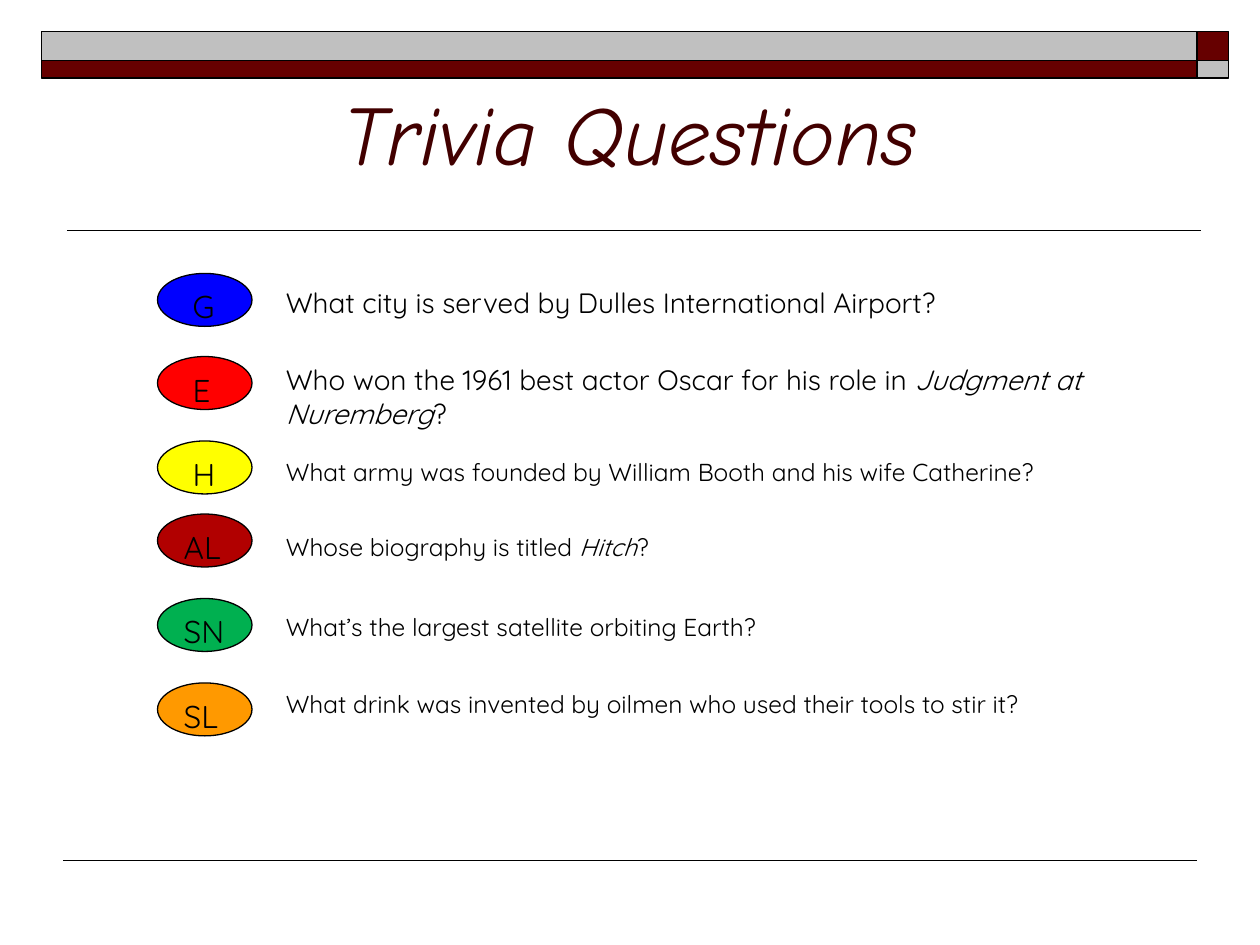
from pptx import Presentation, util as u
from pptx.dml.color import RGBColor
from pptx.enum import shapes, text
from pptx.oxml.ns import qn
from lxml import etree

COLORS = {
    "black": "000000", "maroon": "660000", "silver": "C0C0C0", "title": "420000",
    "blue": "0000FF", "red": "FF0000", "yellow": "FFFF00", "brown": "B10000",
    "green": "00B050", "orange": "FF9900",
}
BODY = {"name": "Quicksand", "color": "black"}
TITLE = {"name": "Comic Neue", "size": u.Pt(48), "italic": True, "bold": False, "color": "title"}

# label, label indent, colour, oval top, question top, width, height, size, runs as (text, italic)
QUESTIONS = [
    ("G", 0.07, "blue", 2.17, 2.22, 6.17, 0.37, 16,
     [("What city is served by Dulles International Airport?", False)]),
    ("E", 0.07, "red", 2.83, 2.83, 6.75, 0.64, 16,
     [("Who won the 1961 best actor Oscar for his role in ", False),
      ("Judgment at Nuremberg", True), ("?", False)]),
    ("H", 0.07, "yellow", 3.5, 3.58, 6.58, 0.34, 14,
     [("What army was founded by William Booth and his wife Catherine?", False)]),
    ("AL", 0, "brown", 4.08, 4.17, 7.08, 0.34, 14,
     [("Whose biography is titled ", False), ("Hitch", True), ("?", False)]),
    ("SN", 0, "green", 4.75, 4.81, 6.5, 0.34, 14,
     [("What’s the largest satellite orbiting Earth?", False)]),
    ("SL", 0, "orange", 5.42, 5.42, 7.17, 0.34, 14,
     [("What drink was invented by oilmen who used their tools to stir it?", False)]),
]


def rgb(name):
    """Return the named colour."""
    return RGBColor.from_string(COLORS[name])


def add_run(p, words, **style):
    """Add a run and apply its font values."""
    r = p.add_run()
    r.text = words
    for key, value in style.items():
        if key == "color":
            r.font.color.rgb = rgb(value)
        else:
            setattr(r.font, key, value)


def add_rule(s, left, top, width, weight):
    """Draw a horizontal black rule."""
    left, top, width = u.Inches(left), u.Inches(top), u.Inches(width)
    rule = s.shapes.add_connector(shapes.MSO_CONNECTOR.STRAIGHT, left, top, left + width, top)
    rule.line.color.rgb = rgb("black")
    rule.line.width = u.Pt(weight)
    etree.SubElement(rule._element.spPr, qn("a:effectLst"))


def add_filled(s, kind, box, color, weight):
    """Draw a filled, black-outlined preset shape."""
    sp = s.shapes.add_shape(kind, *map(u.Inches, box))
    sp.shadow.inherit = False
    sp.fill.solid()
    sp.fill.fore_color.rgb = rgb(color)
    sp.line.color.rgb = rgb("black")
    sp.line.width = u.Pt(weight)
    return sp


def add_banner(s):
    """Draw the two-row banner with its end blocks in swapped colours."""
    for top, height, main_color, end_color in [(0.25, 0.23, "silver", "maroon"),
                                               (0.48, 0.14, "maroon", "silver")]:
        for left, width, color in [(0.33, 9.17, main_color), (9.5, 0.25, end_color)]:
            add_filled(s, shapes.MSO_SHAPE.RECTANGLE, (left, top, width, height), color, 1)


def set_title(s, words):
    """Place and format the title placeholder."""
    sp = s.shapes.title
    for key, value in {"left": 0.5, "top": 0.25, "width": 9, "height": 1.25}.items():
        setattr(sp, key, u.Inches(value))
    tf = sp.text_frame
    tf.vertical_anchor = text.MSO_ANCHOR.BOTTOM
    p = tf.paragraphs[0]
    p.alignment = text.PP_ALIGN.CENTER
    add_run(p, words, **TITLE)


def add_category(s, label, indent, color, top):
    """Draw a category oval with its letters."""
    sp = add_filled(s, shapes.MSO_SHAPE.OVAL, (1.25, top, 0.75, 0.42), color, 0.75)
    tf = sp.text_frame
    for key, value in {"vertical_anchor": text.MSO_ANCHOR.TOP, "word_wrap": True,
                       "margin_left": u.Inches(0.1 + indent), "margin_right": 0}.items():
        setattr(tf, key, value)
    p = tf.paragraphs[0]
    p.alignment = text.PP_ALIGN.LEFT
    add_run(p, label, size=u.Pt(18), **BODY)


def add_question(s, top, width, height, size, runs):
    """Add a question beside its category oval."""
    tf = s.shapes.add_textbox(*map(u.Inches, (2.17, top, width, height))).text_frame
    tf.word_wrap = True
    tf.auto_size = text.MSO_AUTO_SIZE.SHAPE_TO_FIT_TEXT
    for words, italic in runs:
        add_run(tf.paragraphs[0], words, size=u.Pt(size), italic=italic, **BODY)


def main():
    """Build the trivia slide."""
    prs = Presentation()
    prs.slide_width, prs.slide_height = u.Inches(10), u.Inches(7.5)
    s = prs.slides.add_slide(prs.slide_layouts[5])
    add_rule(s, 0.53, 1.83, 9, 1)
    add_banner(s)
    add_rule(s, 0.5, 6.83, 9, 0.75)
    set_title(s, "Trivia Questions")
    for label, indent, color, oval_top, *question in QUESTIONS:
        add_category(s, label, indent, color, oval_top)
        add_question(s, *question)
    prs.save("out.pptx")


if __name__ == "__main__":
    main()
